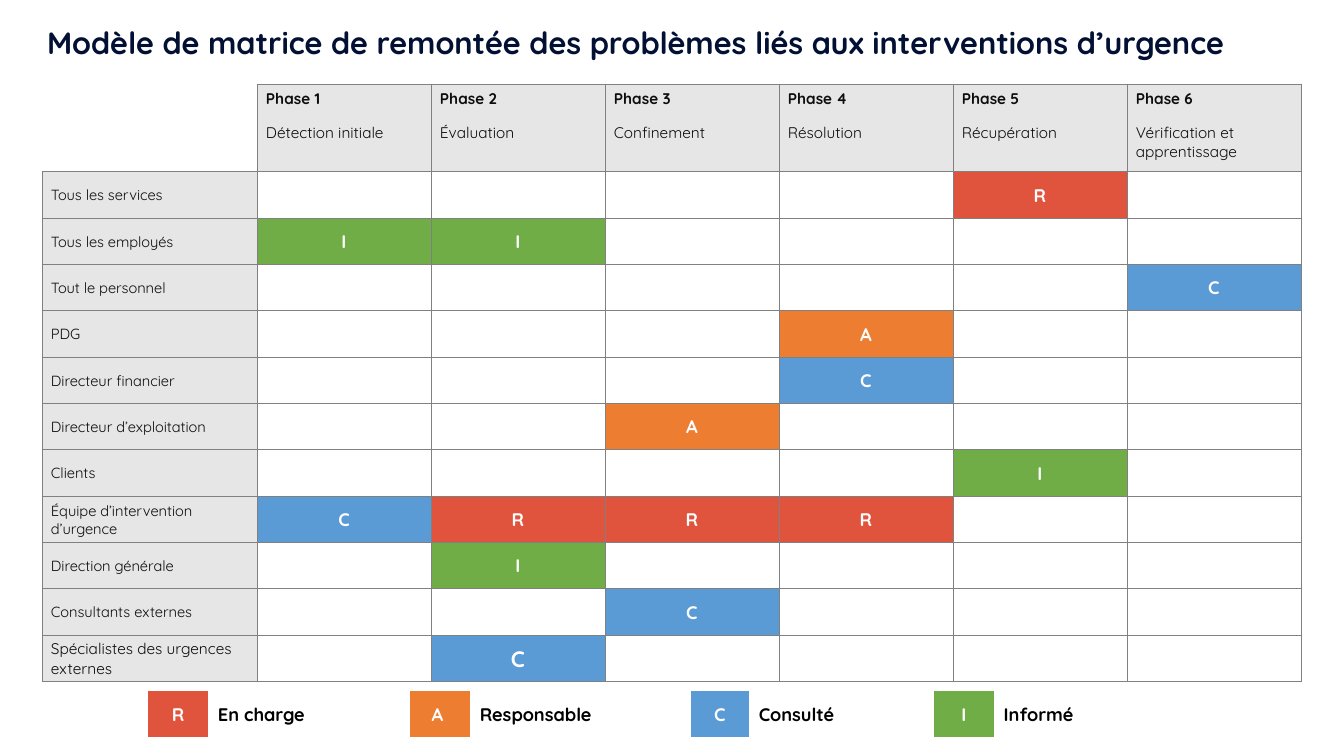
from lxml import etree
from pptx import Presentation
from pptx.dml.color import RGBColor
from pptx.enum.text import MSO_ANCHOR, MSO_AUTO_SIZE, PP_ALIGN
from pptx.oxml.ns import qn
from pptx.util import Emu, Pt

TOP, MIDDLE = MSO_ANCHOR.TOP, MSO_ANCHOR.MIDDLE
LEFT, CENTER = PP_ALIGN.LEFT, PP_ALIGN.CENTER
NO_AUTOSIZE = MSO_AUTO_SIZE.NONE

NAVY = RGBColor(0x01, 0x10, 0x33)
INK = RGBColor(0x0D, 0x0D, 0x0D)
BLACK = RGBColor(0x00, 0x00, 0x00)
WHITE = RGBColor(0xFF, 0xFF, 0xFF)
LIGHT_GRAY = RGBColor(0xE7, 0xE6, 0xE6)
BORDER_GRAY = RGBColor(0x80, 0x80, 0x80)
RED = RGBColor(0xE0, 0x53, 0x3C)
ORANGE = RGBColor(0xED, 0x7D, 0x31)
BLUE = RGBColor(0x5B, 0x9B, 0xD5)
GREEN = RGBColor(0x70, 0xAD, 0x47)

FONT = "Quicksand"
EMU_PER_PX = 914400 / 100.8
PLAIN_TABLE_STYLE = "{2D5ABB26-0587-4C30-8999-92F81FD0307C}"
BORDER_SIDES = "LRTB"
MARK_COLORS = {"R": RED, "A": ORANGE, "C": BLUE, "I": GREEN}

TITLE = "Modèle de matrice de remontée des problèmes liés aux interventions d’urgence"
PHASES = [
    ("Phase 1", "Détection initiale"),
    ("Phase 2", "Évaluation"),
    ("Phase 3", "Confinement"),
    ("Phase 4", "Résolution"),
    ("Phase 5", "Récupération"),
    ("Phase 6", "Vérification et apprentissage"),
]
# Role, one mark per phase ("." is blank), label size, mark size
ROLES = [
    ("Tous les services", "....R.", 10.5, 13),
    ("Tous les employés", "II....", 10.5, 13),
    ("Tout le personnel", ".....C", 10.5, 13),
    ("PDG", "...A..", 10.5, 13),
    ("Directeur financier", "...C..", 10.5, 13),
    ("Directeur d’exploitation", "..A...", 10.5, 13),
    ("Clients", "....I.", 10.5, 13),
    ("Équipe d’intervention d’urgence", "CRRR..", 10.5, 13),
    ("Direction générale", ".I....", 10.5, 13),
    ("Consultants externes", "..C...", 10.5, 13),
    ("Spécialistes des urgences externes", ".C....", 11, 16),
]
LEGEND = [("R", "En charge"), ("A ", "Responsable"), ("C", "Consulté"), ("I", "Informé")]

MATRIX_LEFT, MATRIX_TOP = 42, 84
MATRIX_WIDTHS = [215] + [174] * len(PHASES)
HEADER_HEIGHTS = [29, 58]
ROLES_HEIGHT = 510
LEGEND_LEFT, LEGEND_TOP, LEGEND_HEIGHT = 148, 691, 46
LEGEND_WIDTHS = [60, 202, 60, 221, 58, 185, 60, 202]


def px(length):
    return Emu(round(length * EMU_PER_PX))


def set_attributes(target, values):
    for name, value in values.items():
        setattr(target, name, value)


def write_text(paragraph, text, size, color, bold=False, alignment=LEFT):
    paragraph.alignment = alignment
    run = paragraph.add_run()
    run.text = text
    set_attributes(run.font, {"name": FONT, "size": Pt(size), "bold": bold})
    run.font.color.rgb = color


def set_borders(cell, sides):
    """Draw thin gray lines on the given sides; the others stay without a line."""
    properties = cell._tc.get_or_add_tcPr()
    for index, side in enumerate(BORDER_SIDES):
        line = etree.Element(qn(f"a:ln{side}"), w=str(Pt(0.5)))
        if side in sides:
            fill = etree.SubElement(line, qn("a:solidFill"))
            etree.SubElement(fill, qn("a:srgbClr"), val=str(BORDER_GRAY))
        else:
            etree.SubElement(line, qn("a:noFill"))
        properties.insert(index, line)


def format_cell(cell, fill, borders="", margins=(1, 1, 1, 0), anchor=MIDDLE):
    cell.fill.solid()
    cell.fill.fore_color.rgb = fill
    left, top, right, bottom = map(px, margins)
    set_attributes(cell, {
        "margin_left": left, "margin_top": top,
        "margin_right": right, "margin_bottom": bottom,
        "vertical_anchor": anchor,
    })
    set_borders(cell, borders)


def fill_label(cell, text, size, color, bold=False, **cell_format):
    format_cell(cell, **cell_format)
    write_text(cell.text_frame.paragraphs[0], text, size, color, bold)


def fill_mark(cell, mark, size, borders=""):
    format_cell(cell, MARK_COLORS[mark[0]], borders)
    write_text(cell.text_frame.paragraphs[0], mark, size, WHITE, True, CENTER)


def fill_corner(cell, borders):
    """Small empty text keeps the header row from growing."""
    format_cell(cell, WHITE, borders)
    etree.SubElement(cell.text_frame.paragraphs[0]._p, qn("a:endParaRPr"), sz="1100")


def add_plain_table(slide, left, top, widths, heights):
    """Add a table without style; widths are px, heights are EMU."""
    frame = slide.shapes.add_table(len(heights), len(widths), px(left), px(top),
                                   px(sum(widths)), Emu(sum(heights)))
    table = frame.table
    set_attributes(table, {"first_row": False, "horz_banding": False})
    table._tbl.tblPr.find(qn("a:tableStyleId")).text = PLAIN_TABLE_STYLE
    for column, width in zip(table.columns, widths):
        column.width = px(width)
    for row, height in zip(table.rows, heights):
        row.height = height
    return table


def add_title(slide):
    title = slide.shapes.title
    set_attributes(title, {"left": px(37), "top": px(19),
                           "width": px(1307), "height": px(47)})
    set_attributes(title.text_frame, {"word_wrap": True, "vertical_anchor": TOP,
                                      "auto_size": NO_AUTOSIZE})
    write_text(title.text_frame.paragraphs[0], TITLE, 22, NAVY, True)


def add_matrix(slide):
    role_height = Emu(px(ROLES_HEIGHT) // len(ROLES))
    heights = [px(height) for height in HEADER_HEIGHTS] + [role_height] * len(ROLES)
    table = add_plain_table(slide, MATRIX_LEFT, MATRIX_TOP, MATRIX_WIDTHS, heights)

    fill_corner(table.cell(0, 0), "R")
    fill_corner(table.cell(1, 0), "RB")
    for column, (phase, description) in enumerate(PHASES, 1):
        fill_label(table.cell(0, column), phase, 11, INK, True,
                   fill=LIGHT_GRAY, borders="LRT", margins=(9, 1, 1, 0))
        fill_label(table.cell(1, column), description, 11, INK, fill=LIGHT_GRAY,
                   borders="LRB", margins=(9, 10, 1, 10), anchor=TOP)

    for row, (role, marks, label_size, mark_size) in enumerate(ROLES, len(HEADER_HEIGHTS)):
        fill_label(table.cell(row, 0), role, label_size, INK,
                   fill=LIGHT_GRAY, borders=BORDER_SIDES, margins=(9, 1, 1, 0))
        for column, mark in enumerate(marks, 1):
            cell = table.cell(row, column)
            if mark in MARK_COLORS:
                fill_mark(cell, mark, mark_size, BORDER_SIDES)
            else:
                format_cell(cell, WHITE, BORDER_SIDES)


def add_legend(slide):
    table = add_plain_table(slide, LEGEND_LEFT, LEGEND_TOP, LEGEND_WIDTHS,
                            [px(LEGEND_HEIGHT)])
    for index, (mark, meaning) in enumerate(LEGEND):
        fill_mark(table.cell(0, 2 * index), mark, 13)
        fill_label(table.cell(0, 2 * index + 1), meaning, 13, BLACK, True,
                   fill=WHITE, margins=(10, 1, 1, 0))


def main():
    presentation = Presentation()
    set_attributes(presentation, {"slide_width": px(1344), "slide_height": px(756)})
    title_only = presentation.slide_layouts.get_by_name("Title Only")
    slide = presentation.slides.add_slide(title_only)
    add_title(slide)
    add_matrix(slide)
    add_legend(slide)
    presentation.save("out.pptx")


if __name__ == "__main__":
    main()
